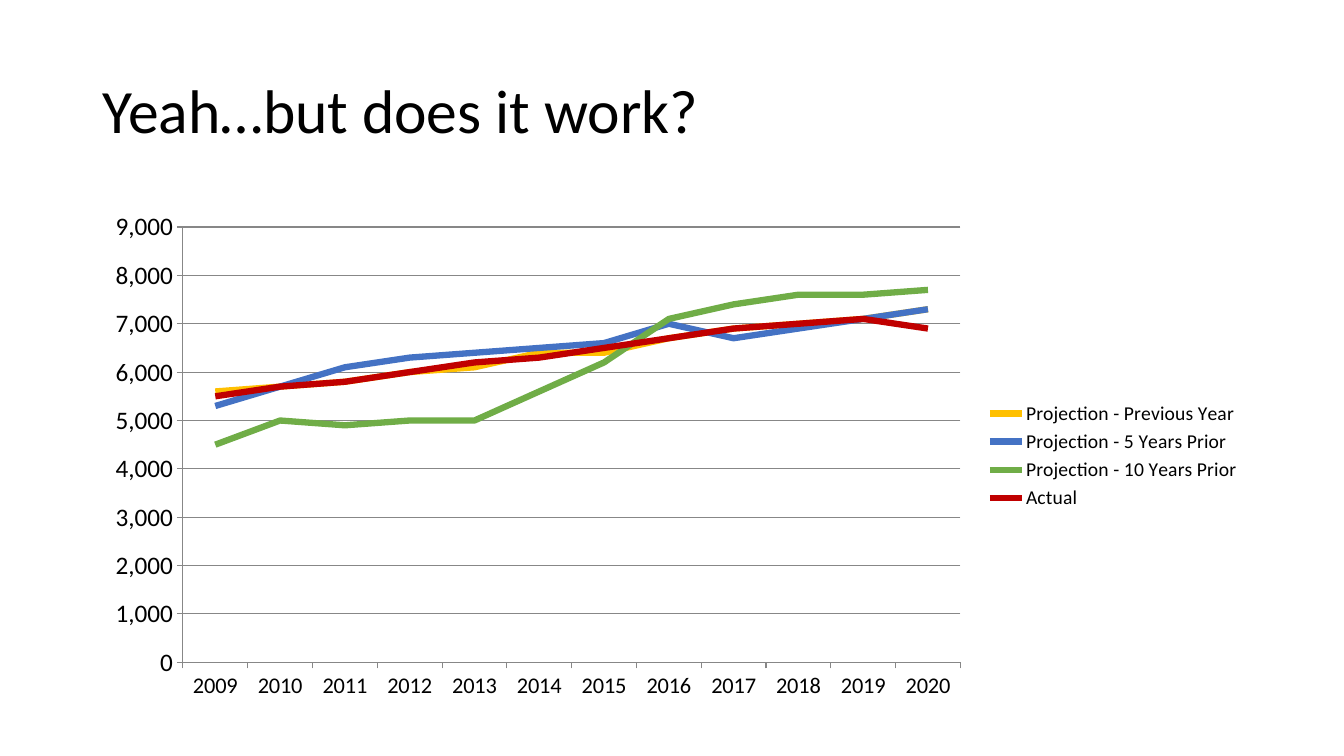
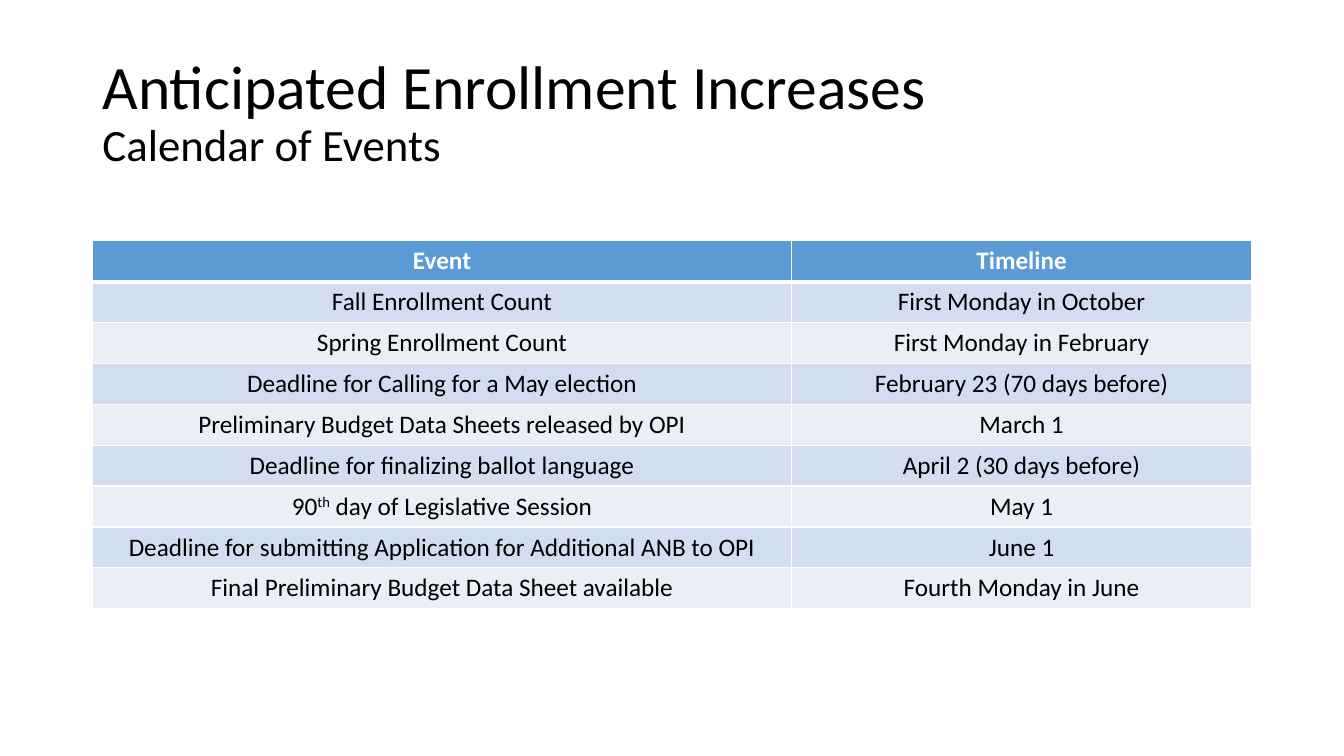
from lxml.etree import SubElement
from pptx import Presentation
from pptx.chart.data import CategoryChartData
from pptx.dml.color import RGBColor
from pptx.enum.chart import XL_CHART_TYPE as ChartType
from pptx.enum.chart import XL_LEGEND_POSITION as LegendPosition
from pptx.enum.chart import XL_TICK_MARK as TickMark
from pptx.enum.text import MSO_ANCHOR as Anchor
from pptx.enum.text import MSO_AUTO_SIZE as AutoSize
from pptx.enum.text import PP_ALIGN as Align
from pptx.oxml.ns import qn
from pptx.util import Pt

FONT = "Calibri"
COLORS = {
    "text": "000000", "white": "FFFFFF", "grid": "878787",
    "header": "5B9BD5", "band_dark": "D2DEEF", "band_light": "EAEFF7",
    "gold": "FFC000", "blue": "4472C4", "green": "70AD47", "red": "C00000",
}
LEFT, WIDTH = 66, 828
TITLE_TOP, TITLE_HEIGHT = 28.8, 104.4
CHART_TOP, CHART_HEIGHT = 144, 363
TABLE_TOP, ROW_HEIGHT = 172, 29.2
COLUMN_WIDTHS = (499.5, 328.5)

CHART_TITLE = [("Yeah…but does it work?", 44)]
YEARS = [str(year) for year in range(2009, 2021)]
SERIES = [
    ("Projection - Previous Year", "gold",
     (5600, 5700, 5800, 6000, 6100, 6400, 6400, 6700, 6900, 7000, 7100, 7300)),
    ("Projection - 5 Years Prior", "blue",
     (5300, 5700, 6100, 6300, 6400, 6500, 6600, 7000, 6700, 6900, 7100, 7300)),
    ("Projection - 10 Years Prior", "green",
     (4500, 5000, 4900, 5000, 5000, 5600, 6200, 7100, 7400, 7600, 7600, 7700)),
    ("Actual", "red",
     (5500, 5700, 5800, 6000, 6200, 6300, 6500, 6700, 6900, 7000, 7100, 6900)),
]

CALENDAR_TITLE = [("Anticipated Enrollment Increases", 44), ("Calendar of Events", 32)]
# Text between carets is superscript.
EVENTS = [
    ("Event", "Timeline"),
    ("Fall Enrollment Count", "First Monday in October"),
    ("Spring Enrollment Count", "First Monday in February"),
    ("Deadline for Calling for a May election", "February 23 (70 days before)"),
    ("Preliminary Budget Data Sheets released by OPI", "March 1"),
    ("Deadline for finalizing ballot language", "April 2 (30 days before)"),
    ("90^th^ day of Legislative Session", "May 1"),
    ("Deadline for submitting Application for Additional ANB to OPI", "June 1"),
    ("Final Preliminary Budget Data Sheet available", "Fourth Monday in June"),
]


def rgb(name):
    return RGBColor.from_string(COLORS[name])


def style_font(font, size, color="text", bold=False):
    font.name, font.size, font.bold = FONT, Pt(size), bold
    font.color.rgb = rgb(color)


def add_text(para, text, size, color="text", bold=False):
    """Add text to a paragraph, raising the parts between carets."""
    for index, part in enumerate(text.split("^")):
        span = para.add_run()
        span.text = part
        style_font(span.font, size, color, bold)
        if index % 2:
            span.font._element.set("baseline", "30000")


def add_page(deck, title_lines):
    page = deck.slides.add_slide(deck.slide_layouts.get_by_name("Title Only"))
    title = page.shapes.title
    title.left, title.top = Pt(LEFT), Pt(TITLE_TOP)
    title.width, title.height = Pt(WIDTH), Pt(TITLE_HEIGHT)
    frame = title.text_frame
    frame.auto_size, frame.word_wrap = AutoSize.NONE, True
    frame.vertical_anchor = Anchor.MIDDLE
    para = frame.paragraphs[0]
    para.alignment, para.line_spacing = Align.LEFT, 0.9
    for index, (text, size) in enumerate(title_lines):
        if index:
            para.add_line_break()
        add_text(para, text, size)
    return page


def add_enrollment_chart(page):
    data = CategoryChartData(number_format="#,##0")
    data.categories = YEARS
    for name, _, values in SERIES:
        data.add_series(name, values)
    chart = page.shapes.add_chart(ChartType.LINE, Pt(LEFT), Pt(CHART_TOP),
                                  Pt(WIDTH), Pt(CHART_HEIGHT), data).chart
    style_font(chart.font, 10)
    chart.has_title = False
    chart.has_legend = True
    chart.legend.position = LegendPosition.RIGHT
    chart.legend.include_in_layout = False
    style_font(chart.legend.font, 14)

    for axis, size in ((chart.category_axis, 16), (chart.value_axis, 18)):
        style_font(axis.tick_labels.font, size)
        axis.major_tick_mark, axis.minor_tick_mark = TickMark.OUTSIDE, TickMark.NONE
        axis.format.line.color.rgb = rgb("grid")
        axis.format.line.width = Pt(0.75)
    values_axis = chart.value_axis
    values_axis.minimum_scale, values_axis.maximum_scale = 0, 9000
    values_axis.major_unit = 1000
    values_axis.tick_labels.number_format = "#,##0"
    values_axis.tick_labels.number_format_is_linked = False
    values_axis.has_major_gridlines = True
    values_axis.major_gridlines.format.line.color.rgb = rgb("grid")
    values_axis.major_gridlines.format.line.width = Pt(0.75)

    plot = chart.plots[0]
    plot.vary_by_categories = False
    for series, (_, color, _) in zip(plot.series, SERIES):
        series.smooth = False
        series.format.line.color.rgb = rgb(color)
        series.format.line.width = Pt(4.5)


def add_borders(cell, **widths):
    """Draw white cell borders; sides are L, R, T and B, widths in points."""
    properties = cell._tc.get_or_add_tcPr()
    for side in "LRTB":
        line = SubElement(properties, qn(f"a:ln{side}"), w=str(Pt(widths.get(side, 1))))
        fill = SubElement(line, qn("a:solidFill"))
        SubElement(fill, qn("a:srgbClr"), val=COLORS["white"])


def add_calendar_table(page):
    table = page.shapes.add_table(
        len(EVENTS), len(COLUMN_WIDTHS), Pt(LEFT), Pt(TABLE_TOP),
        Pt(WIDTH), Pt(ROW_HEIGHT * len(EVENTS))).table
    for column, width in zip(table.columns, COLUMN_WIDTHS):
        column.width = Pt(width)
    for row_index, texts in enumerate(EVENTS):
        table.rows[row_index].height = Pt(ROW_HEIGHT)
        is_header = row_index == 0
        band = "header" if is_header else "band_dark" if row_index % 2 else "band_light"
        for column_index, text in enumerate(texts):
            cell = table.cell(row_index, column_index)
            add_borders(cell, T=3 if row_index == 1 else 1, B=3 if is_header else 1)
            cell.fill.solid()
            cell.fill.fore_color.rgb = rgb(band)
            cell.vertical_anchor = Anchor.MIDDLE
            para = cell.text_frame.paragraphs[0]
            para.alignment = Align.CENTER
            add_text(para, text, 18, "white" if is_header else "text", is_header)


def main():
    deck = Presentation()
    deck.slide_width, deck.slide_height = Pt(960), Pt(540)
    add_enrollment_chart(add_page(deck, CHART_TITLE))
    add_calendar_table(add_page(deck, CALENDAR_TITLE))
    deck.save("out.pptx")


if __name__ == "__main__":
    main()
